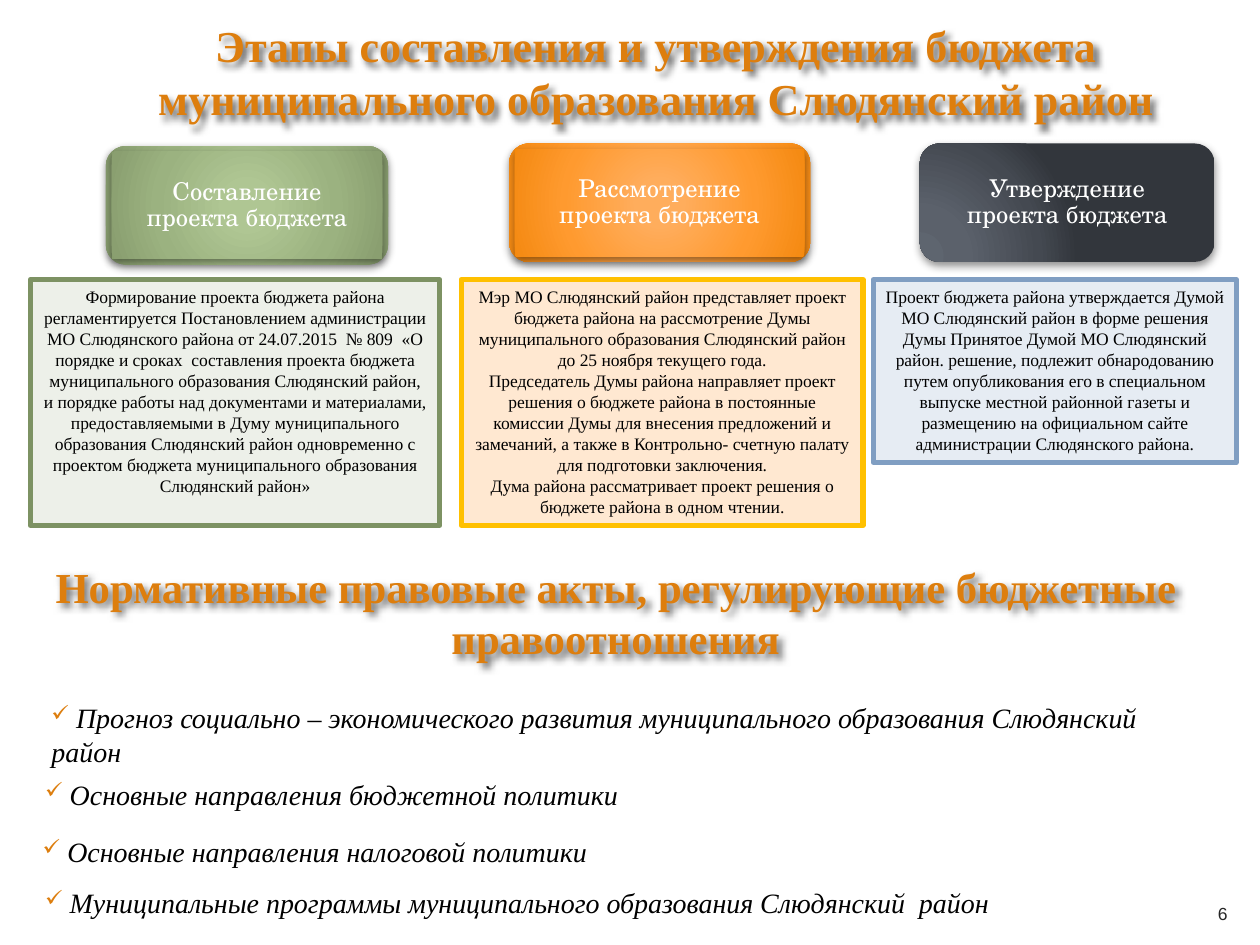
from dataclasses import dataclass
from lxml import etree
from pptx import Presentation
from pptx.dml.color import RGBColor
from pptx.enum.shapes import MSO_SHAPE
from pptx.enum.text import MSO_ANCHOR, PP_ALIGN
from pptx.oxml.ns import qn
from pptx.util import Pt

RECT, ROUND = MSO_SHAPE.RECTANGLE, MSO_SHAPE.ROUNDED_RECTANGLE
TOP, MID = MSO_ANCHOR.TOP, MSO_ANCHOR.MIDDLE
LEFT, MIDDLE = PP_ALIGN.LEFT, PP_ALIGN.CENTER


@dataclass(frozen=True)
class Theme:
    serif: str = "Times New Roman"
    school: str = "TeX Gyre Schola"
    sans: str = "Arial"
    black: str = "000000"
    white: str = "FFFFFF"
    gray: str = "262626"
    orange: str = "DD7E0E"
    title: float = 25.2
    second: float = 24.4
    item: float = 16
    head: float = 14
    small: float = 10
    green_fill: tuple = ((0, "AFC794"), (15, "AFC693"), (62, "9BB280"),
                         (97, "8A9F70"), (100, "879D6D"))
    orange_fill: tuple = ((0, "FFAE5E"), (15, "FFAD5C"), (62, "FF9A2F"),
                          (97, "F58B14"), (100, "F68909"))
    dark_fill: tuple = ((0, "5E656F"), (30, "5B616B"), (75, "444951"),
                        (100, "32363C"))
    green_box: tuple = ("EDF0E9", "7D9263")
    orange_box: tuple = ("FFE8D1", "FFC000")
    blue_box: tuple = ("E6ECF3", "809EC2")


T = Theme()
CENTER = (50, 50, 50, 50)
CORNER = (5, 100, 120, 10)


def node(up, tag, **attrs):
    return etree.SubElement(up, qn(tag), {k: str(v) for k, v in attrs.items()})


def paint(shape, stops, focus):
    shape.fill.background()
    props = shape.fill._xPr
    old = props.find(qn("a:noFill"))
    grad = etree.Element(qn("a:gradFill"), rotWithShape="1")
    props.replace(old, grad)
    row = node(grad, "a:gsLst")
    for pos, color in stops:
        node(node(row, "a:gs", pos=pos * 1000), "a:srgbClr", val=color)
    way = node(grad, "a:path", path="circle")
    sides = {k: v * 1000 for k, v in zip("ltrb", focus)}
    node(way, "a:fillToRect", **sides)


def shade(shape, blur, dist, turn, alpha):
    shape.shadow.inherit = False
    fx = shape._element.spPr.find(qn("a:effectLst"))
    drop = node(fx, "a:outerShdw", blurRad=Pt(blur), dist=Pt(dist),
                dir=turn * 60000, algn="tl", rotWithShape=0)
    node(node(drop, "a:srgbClr", val=T.black), "a:alpha", val=alpha * 1000)


def block(shapes, kind, box):
    shape = shapes.add_shape(kind, *map(Pt, box))
    shape.shadow.inherit = False
    shape.line.fill.background()
    return shape


def write(shape, lines, font, size, color, align=MIDDLE, anchor=MID,
          pad=(7.2, 3.6), bold=False, slant=False, space=None, tick=False):
    frame = shape.text_frame
    frame.word_wrap = True
    frame.vertical_anchor = anchor
    frame.margin_left = frame.margin_right = Pt(pad[0])
    frame.margin_top = frame.margin_bottom = Pt(pad[1])
    for i, line in enumerate(lines):
        para = frame.add_paragraph() if i else frame.paragraphs[0]
        para.alignment = align
        if space:
            para.line_spacing = space
        if tick:
            mark(para)
        run = para.add_run()
        run.text = line
        run.font.name = font
        run.font.size = Pt(size)
        run.font.bold = bold
        run.font.italic = slant
        run.font.color.rgb = RGBColor.from_string(color)


def mark(para):
    props = para._p.get_or_add_pPr()
    props.set("marL", "0")
    props.set("indent", str(-Pt(14.4)))
    node(node(props, "a:buClr"), "a:srgbClr", val=T.orange)
    node(props, "a:buSzPct", val=80000)
    node(props, "a:buChar", char="✓")
    node(node(props, "a:tabLst"), "a:tab", pos=Pt(14.4), algn="l")


def heading(slide, box, text, size):
    shape = slide.shapes.add_textbox(*map(Pt, box))
    write(shape, [text], T.serif, size, T.orange, bold=True)
    shade(shape, 4, 3, 45, 60)


def stage(slide, box, head, name, stops, focus, lines, colors):
    x, y, w, h = box
    dx, dy, hw = head
    group = slide.shapes.add_group_shape().shapes
    inset = 3.3
    tall = 67.7
    plate = block(group, ROUND, (x + dx, y + dy, hw, tall))
    paint(plate, stops, focus)
    shade(plate, 5, 2, 90, 43)
    inner = (x + dx + inset, y + dy + inset, hw - 2 * inset, tall - 2 * inset)
    if focus == CENTER:
        label = block(group, RECT, inner)
        paint(label, stops, focus)
        shade(label, 5, 2, 90, 43)
    else:
        label = group.add_textbox(*map(Pt, inner))
    write(label, [name], T.school, T.head, T.white, pad=(18, 0), space=0.9)

    drop = 77.8
    body = block(slide.shapes, RECT, (x, y + drop, w, h - drop))
    fill, edge = colors
    body.fill.solid()
    body.fill.fore_color.rgb = RGBColor.from_string(fill)
    body.line.color.rgb = RGBColor.from_string(edge)
    body.line.width = Pt(3)
    write(body, lines, T.serif, T.small, T.black, anchor=TOP)


def acts(slide, box, items):
    x, y, w, h = box
    for dx, dy, text in items:
        shape = slide.shapes.add_textbox(Pt(x + dx), Pt(y + dy), Pt(w), Pt(h))
        write(shape, [text], T.serif, T.item, T.black, align=LEFT,
              anchor=TOP, slant=True, tick=True)


def number(slide, box, text):
    shape = slide.shapes.add_textbox(*map(Pt, box))
    write(shape, [text], T.sans, T.small, T.gray)


STAGES = [
    ((17.3, 82, 234, 218.2), (43.2, 1.5, 161.3), "Составление проекта бюджета",
     T.green_fill, CENTER,
     ["Формирование проекта бюджета района регламентируется Постановлением администрации МО Слюдянского района от 24.07.2015  № 809  «О порядке и сроках  составления проекта бюджета муниципального образования Слюдянский район, и порядке работы над документами и материалами, предоставляемыми в Думу муниципального образования Слюдянский район одновременно с проектом бюджета муниципального образования Слюдянский район»"],
     T.green_box),
    ((263.5, 82, 229.7, 218.2), (27.4, 0, 172.1), "Рассмотрение проекта бюджета",
     T.orange_fill, CENTER,
     ["Мэр МО Слюдянский район представляет проект бюджета района на рассмотрение Думы муниципального образования Слюдянский район до 25 ноября текущего года.",
      "Председатель Думы района направляет проект решения о бюджете района в постоянные комиссии Думы для внесения предложений и замечаний, а также в Контрольно- счетную палату для подготовки заключения.",
      "Дума района рассматривает проект решения о бюджете района в одном чтении."],
     T.orange_box),
    ((499, 82, 207.4, 182.2), (26.6, 0, 168.5), "Утверждение проекта бюджета",
     T.dark_fill, CORNER,
     ["Проект бюджета района утверждается Думой МО Слюдянский район в форме решения Думы Принятое Думой МО Слюдянский район. решение, подлежит обнародованию путем опубликования его в специальном выпуске местной районной газеты и размещению на официальном сайте администрации Слюдянского района."],
     T.blue_box),
]
ACTS = [
    (5, 0, " Прогноз социально – экономического развития муниципального образования Слюдянский район"),
    (1.4, 44, " Основные направления бюджетной политики"),
    (0, 76.6, " Основные направления налоговой политики"),
    (1.4, 105.6, " Муниципальные программы муниципального образования Слюдянский  район"),
]


def main():
    deck = Presentation()
    deck.slide_width, deck.slide_height = Pt(720), Pt(540)
    slide = deck.slides.add_slide(deck.slide_layouts[6])
    heading(slide, (45.4, 14.4, 658.8, 53.3),
            "Этапы составления и утверждения бюджета муниципального образования Слюдянский район", T.title)
    for part in STAGES:
        stage(slide, *part)
    heading(slide, (9.4, 314.6, 684.7, 69.8),
            "Нормативные правовые акты, регулирующие бюджетные правоотношения", T.second)
    acts(slide, (17.3, 396.7, 666, 36.7), ACTS)
    number(slide, (680.4, 507.6, 36.7, 28.8), "6")
    deck.save("out.pptx")


if __name__ == "__main__":
    main()
